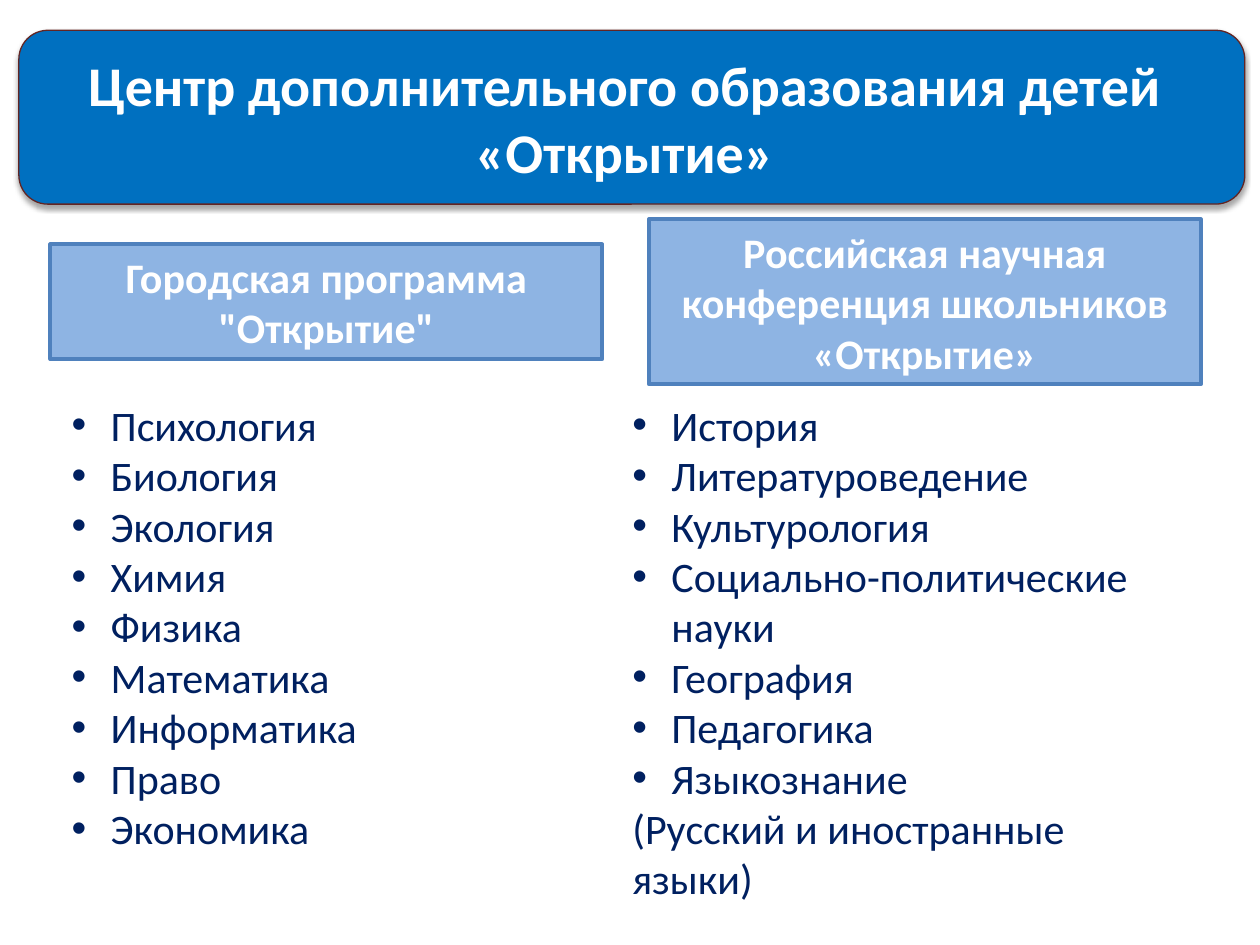
import pptx
import pptx.util
import pptx.dml.color
import pptx.enum.shapes
import pptx.enum.text
import pptx.oxml
import pptx.oxml.ns

Inches, Pt = pptx.util.Inches, pptx.util.Pt
SHAPES = pptx.enum.shapes.MSO_SHAPE
ALIGN = pptx.enum.text.PP_ALIGN
ANCHOR = pptx.enum.text.MSO_ANCHOR

# Content
TITLE = "Центр дополнительного образования детей «Открытие»"
# heading, its box (left, top, width, height)
HEADINGS = [
    ('Городская программа "Открытие"', (0.4, 1.94, 4.38, 0.91)),
    ("Российская научная конференция школьников «Открытие»", (5.15, 1.74, 4.38, 1.31)),
]
# bulleted subjects, closing line without a bullet
SUBJECTS = [
    (["Психология", "Биология", "Экология", "Химия", "Физика", "Математика",
      "Информатика", "Право", "Экономика"], None),
    (["История", "Литературоведение", "Культурология",
      "Социально-политические науки", "География", "Педагогика", "Языкознание"],
     "(Русский и иностранные языки)"),
]

# Formats
TITLE_FONT = {"name": "Calibri", "size": Pt(32), "bold": True}
HEADING_FONT = {"name": "Calibri", "size": Pt(24), "bold": True}
SUBJECT_FONT = {"name": "Calibri", "size": Pt(24), "bold": False}
HEADING_SPACING = {"space_before": Pt(12), "space_after": Pt(12)}
LIST_LEFT, LIST_TOP, LIST_HEIGHT = 0.47, 3.12, 4.3
COLUMN_WIDTH, INSET = 4.45, 0.1
INDENT = 0.31
SHADOW = (
    '<a:effectLst %s><a:outerShdw blurRad="%d" dist="%d" dir="5400000" rotWithShape="0">'
    '<a:srgbClr val="000000"><a:alpha val="35000"/></a:srgbClr></a:outerShdw></a:effectLst>'
    % (pptx.oxml.ns.nsdecls("a"), Pt(3.1), Pt(1.8))
)


def rgb(hex_color):
    return pptx.dml.color.RGBColor.from_string(hex_color)


def add_panel(slide, kind, box, fill, line, line_width):
    panel = slide.shapes.add_shape(kind, *map(Inches, box))
    panel.shadow.inherit = False
    panel.fill.solid()
    panel.fill.fore_color.rgb = rgb(fill)
    panel.line.color.rgb = rgb(line)
    panel.line.width = Pt(line_width)
    return panel


def add_text_box(slide, box, anchor):
    frame = slide.shapes.add_textbox(*map(Inches, box)).text_frame
    frame.word_wrap = True
    frame.vertical_anchor = anchor
    return frame


def write(paragraph, text, font, color, **layout):
    run = paragraph.add_run()
    run.text = text
    for target, values in ((run.font, font), (paragraph, layout)):
        for name, value in values.items():
            setattr(target, name, value)
    run.font.color.rgb = rgb(color)


def add_bullet(paragraph):
    properties = paragraph._p.get_or_add_pPr()
    properties.set("marL", str(Inches(INDENT)))
    properties.set("indent", str(-Inches(INDENT)))
    for tag, attribute, value in (("buFont", "typeface", "Arial"), ("buChar", "char", "•")):
        properties.append(pptx.oxml.parse_xml(
            '<a:%s %s %s="%s"/>' % (tag, pptx.oxml.ns.nsdecls("a"), attribute, value)))


def main():
    deck = pptx.Presentation()
    deck.slide_width, deck.slide_height = Inches(10), Inches(7.5)
    slide = deck.slides.add_slide(deck.slide_layouts[6])

    # Title banner with a soft shadow below
    banner = add_panel(slide, SHAPES.ROUNDED_RECTANGLE, (0.15, 0.24, 9.73, 1.38),
                       "0070C0", "632523", 0.75)
    properties = banner._element.spPr
    properties.replace(properties.find(pptx.oxml.ns.qn("a:effectLst")),
                       pptx.oxml.parse_xml(SHADOW))
    title = add_text_box(slide, (0.43, 0.34, 9.06, 1.18), ANCHOR.MIDDLE)
    write(title.paragraphs[0], TITLE, TITLE_FONT, "FFFFFF", alignment=ALIGN.CENTER)

    # Programme headings
    for heading, box in HEADINGS:
        panel = add_panel(slide, SHAPES.RECTANGLE, box, "8EB4E3", "4F81BD", 2.25)
        panel.text_frame.word_wrap = True
        panel.text_frame.vertical_anchor = ANCHOR.MIDDLE
        write(panel.text_frame.paragraphs[0], heading, HEADING_FONT, "FFFFFF",
              alignment=ALIGN.CENTER, **HEADING_SPACING)

    # Subject lists in two equal columns
    for column, (subjects, closing) in enumerate(SUBJECTS):
        box = (LIST_LEFT + column * COLUMN_WIDTH, LIST_TOP,
               COLUMN_WIDTH + 2 * INSET, LIST_HEIGHT)
        frame = add_text_box(slide, box, ANCHOR.TOP)
        for i, subject in enumerate(subjects):
            paragraph = frame.add_paragraph() if i else frame.paragraphs[0]
            write(paragraph, subject, SUBJECT_FONT, "002060")
            add_bullet(paragraph)
        if closing:
            write(frame.add_paragraph(), closing, SUBJECT_FONT, "002060")

    deck.save("out.pptx")


if __name__ == "__main__":
    main()
